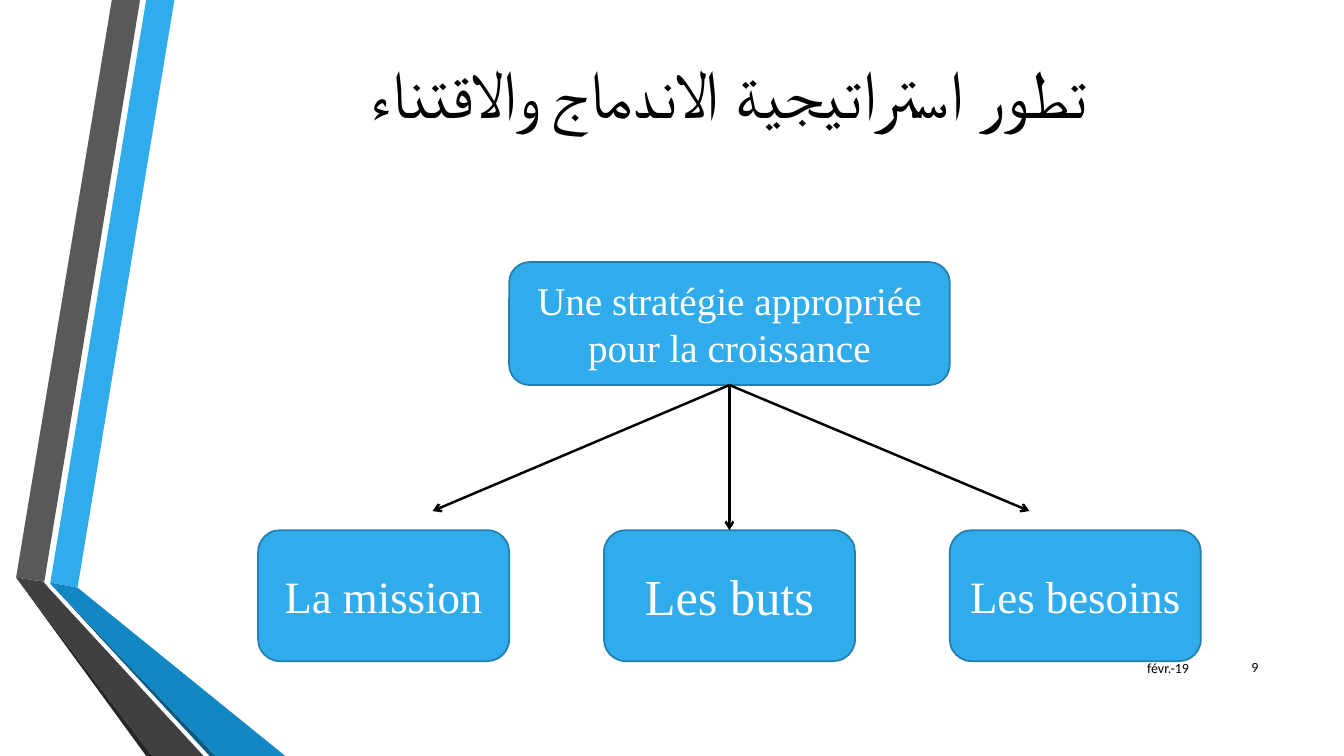
"""Builds the slide on the merger and acquisition growth strategy."""
from pptx import Presentation
from pptx import util as u
from pptx.dml.color import RGBColor
from pptx.enum import shapes, text
from pptx.oxml.ns import qn
from lxml import etree

THEME = {
    "blue": "30ACEC", "outline": "247FAF", "deep": "1287C3", "navy": "0C5A82",
    "grey": "595959", "dark": "404040", "coal": "262626",
    "black": "000000", "white": "FFFFFF",
    "serif": "Times New Roman", "sans": "Calibri",
    "title": 48, "strategy": 28, "goal": 32, "goal_big": 36, "footer": 10,
}


def rgb(name):
    return RGBColor.from_string(THEME[name])


def write(sp, words, size, color, font="serif", align=text.PP_ALIGN.CENTER):
    tf = sp.text_frame
    frame = {"word_wrap": True, "vertical_anchor": text.MSO_ANCHOR.MIDDLE,
             "auto_size": text.MSO_AUTO_SIZE.NONE}
    for key, value in frame.items():
        setattr(tf, key, value)
    p = tf.paragraphs[0]
    p.alignment = align
    r = p.add_run()
    r.text = words
    for key, value in {"name": THEME[font], "size": u.Pt(THEME[size])}.items():
        setattr(r.font, key, value)
    r.font.color.rgb = rgb(color)
    return p


prs = Presentation()
prs.slide_width, prs.slide_height = u.Inches(13.33), u.Inches(7.5)
s = prs.slides.add_slide(prs.slide_layouts[5])

ribbons = [
    ("blue", [(0.5, 5.78), (0.77, 5.83), (1.73, 0), (1.45, 0)]),
    ("grey", [(1.39, 0), (1.11, 0), (0.16, 5.73), (0.44, 5.77)]),
    ("coal", [(0.16, 5.73), (1.45, 7.5), (1.51, 7.5)]),
    ("navy", [(0.5, 5.79), (2.08, 7.5), (2.14, 7.5)]),
    ("deep", [(0.5, 5.79), (2.14, 7.5), (2.83, 7.5), (0.77, 5.83), (0.5, 5.78)]),
    ("dark", [(2.02, 7.5), (0.48, 5.83), (0.43, 5.77), (0.16, 5.73), (1.51, 7.5)]),
]
for color, corners in ribbons:
    points = [(u.Inches(x), u.Inches(y)) for x, y in corners]
    builder = s.shapes.build_freeform(*points[0])
    builder.add_line_segments(points[1:], close=True)
    sp = builder.convert_to_shape()
    sp.shadow.inherit = False
    sp.fill.solid()
    sp.fill.fore_color.rgb = rgb(color)
    sp.line.fill.background()

title = s.shapes.title
place = {"left": 1.76, "top": 0.16, "width": 10.96, "height": 1.5}
for key, value in place.items():
    setattr(title, key, u.Inches(value))
p = write(title, "تطور استراتيجية الاندماج والاقتناء", "title", "black")
p._p.get_or_add_pPr().set("rtl", "1")

goal_left, goal_step = 2.56, 3.43
boxes = [("Une stratégie appropriée pour la croissance", "strategy", 5.05, 2.6, 4.37, 1.22)]
goals = [("La mission", "goal"), ("Les buts", "goal_big"), ("Les besoins", "goal")]
for i, (words, size) in enumerate(goals):
    boxes.append((words, size, goal_left + i * goal_step, 5.26, 2.49, 1.3))

nodes = []
for words, size, *box in boxes:
    sp = s.shapes.add_shape(shapes.MSO_SHAPE.ROUNDED_RECTANGLE, *map(u.Inches, box))
    sp.shadow.inherit = False
    sp.fill.solid()
    sp.fill.fore_color.rgb = rgb("blue")
    sp.line.color.rgb = rgb("outline")
    sp.line.width = u.Pt(1.25)
    write(sp, words, size, "white")
    nodes.append(sp)

strategy, mission, aims, needs = nodes
for x, y, target in [(4.29, 5.07, None), (7.23, 5.26, aims), (10.21, 5.07, None)]:
    arrow = s.shapes.add_connector(shapes.MSO_CONNECTOR.STRAIGHT, u.Inches(7.23),
                                   u.Inches(3.82), u.Inches(x), u.Inches(y))
    arrow.begin_connect(strategy, 2)
    if target is not None:
        arrow.end_connect(target, 0)
    arrow.line.color.rgb = rgb("black")
    arrow.line.width = u.Pt(1.75)
    etree.SubElement(arrow.line._get_or_add_ln(), qn("a:tailEnd"), type="arrow")
    etree.SubElement(arrow._element.spPr, qn("a:effectLst"))

footers = [("févr.-19", 10.64, 6.43, 1.25, 0.4), ("9", 11.98, 6.42, 0.6, 0.4)]
for words, *box in footers:
    sp = s.shapes.add_textbox(*map(u.Inches, box))
    write(sp, words, "footer", "black", "sans", text.PP_ALIGN.RIGHT)

prs.save("out.pptx")
